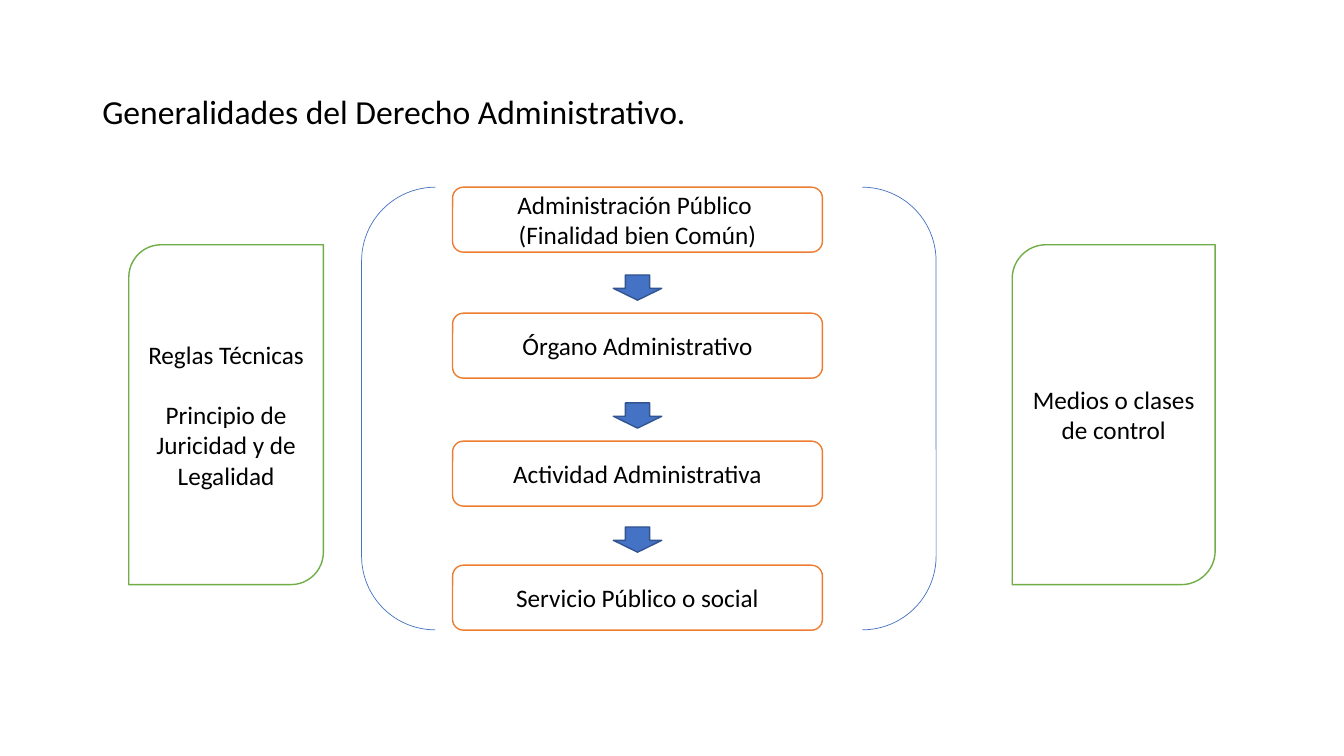
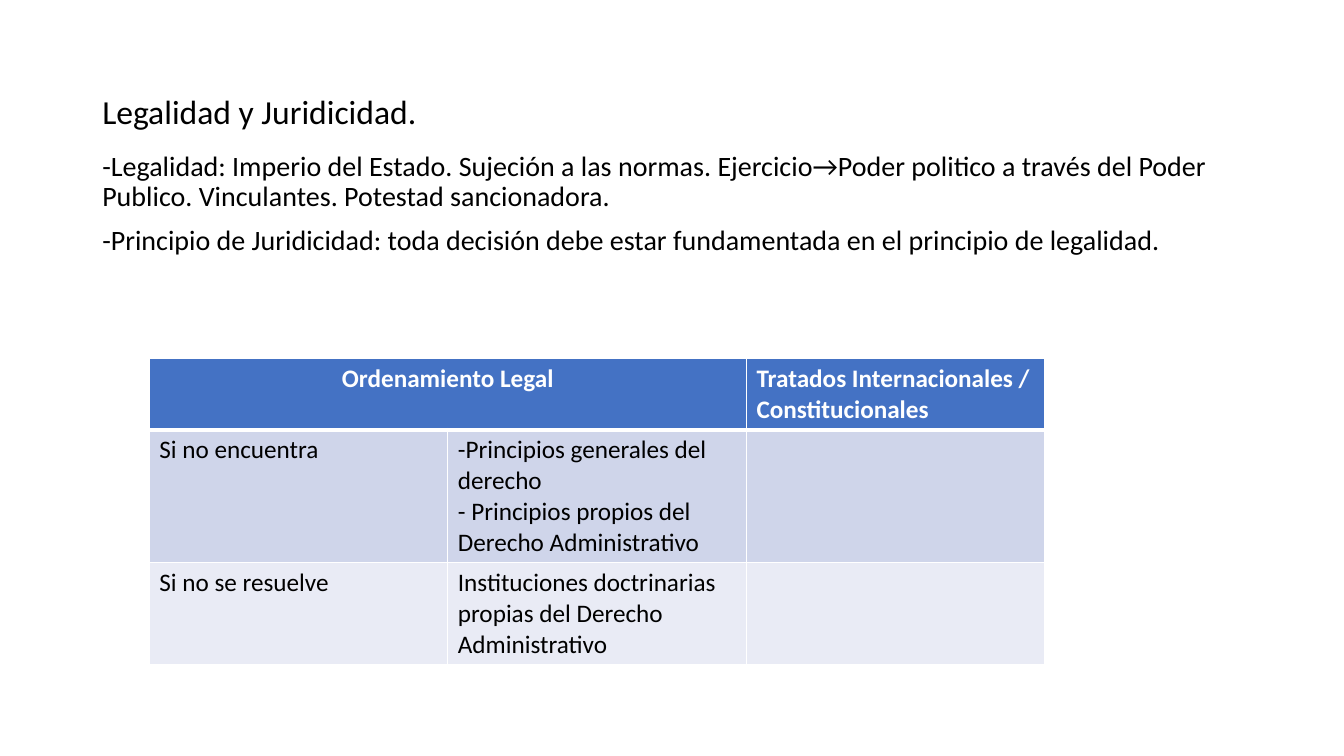
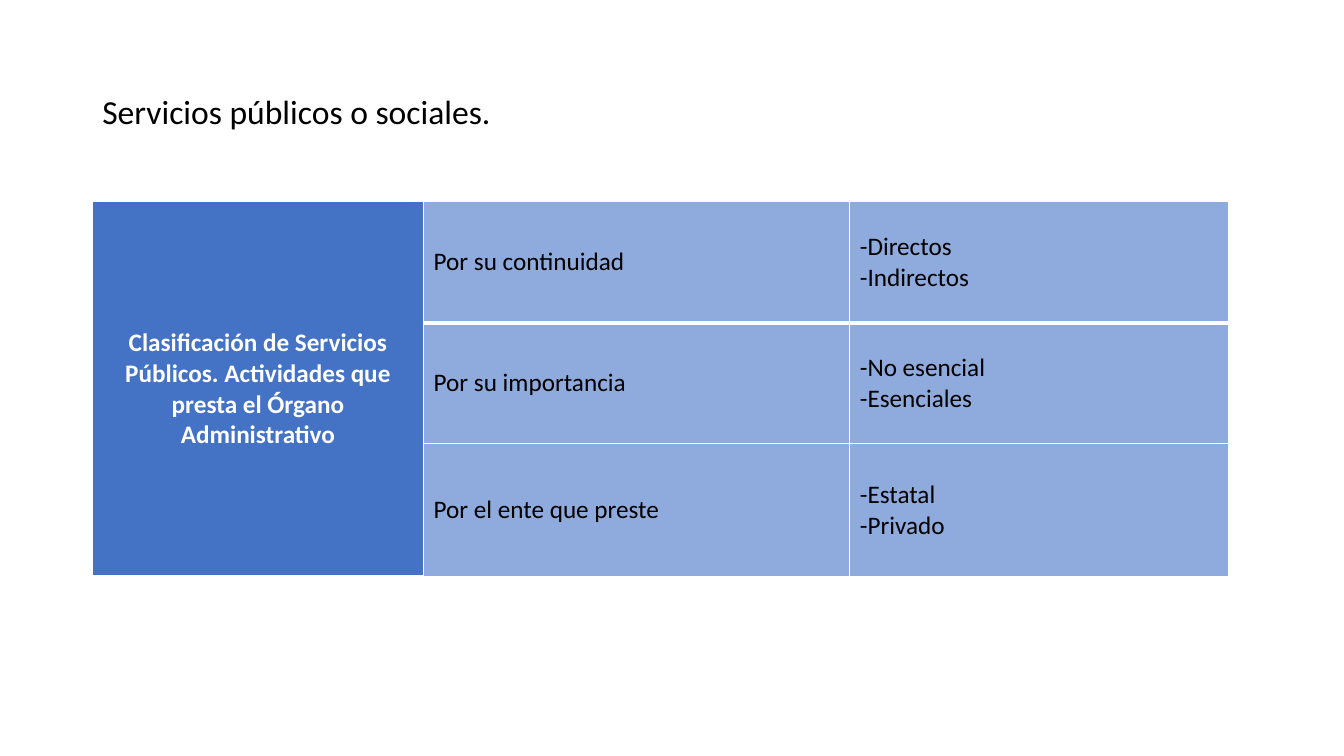
from itertools import accumulate

from lxml import etree
from pptx import Presentation
from pptx.dml.color import RGBColor
from pptx.enum import shapes, text
from pptx.oxml import ns
from pptx.util import Pt

SHAPE = shapes.MSO_SHAPE
LEFT, CENTER = text.PP_ALIGN.LEFT, text.PP_ALIGN.CENTER
TOP, MIDDLE = text.MSO_ANCHOR.TOP, text.MSO_ANCHOR.MIDDLE


class Theme:
    font = "Calibri"
    title, body, label = 24, 20, 18
    black, white = "000000", "FFFFFF"
    blue, dark_blue, mid_blue = "4472C4", "325491", "8FAADC"
    orange, green = "ED7D31", "70AD47"
    band_dark, band_light = "CFD5EA", "E9EBF5"
    thin, line, header_rule = 0.5, 1, 3


def rgb(color):
    return RGBColor.from_string(color)


def write(tf, content, size=Theme.label, color=Theme.black, bold=False,
          align=LEFT, anchor=MIDDLE, spacing=None, before=0):
    """Fill a text frame: one paragraph per line, with \\v as a line break."""
    tf.word_wrap = True
    tf.vertical_anchor = anchor
    for i, line in enumerate(content.split("\n")):
        p = tf.paragraphs[0] if i == 0 else tf.add_paragraph()
        p.text = line
        p.alignment = align
        if spacing:
            p.line_spacing = spacing
        if i:
            p.space_before = Pt(before)
        for r in p.runs:
            r.font.name, r.font.size, r.font.bold = Theme.font, Pt(size), bold
            r.font.color.rgb = rgb(color)


def add_text(slide, box, content, **fmt):
    sp = slide.shapes.add_textbox(*map(Pt, box))
    write(sp.text_frame, content, **fmt)


def add_shape(slide, kind, box, line, fill=None, width=Theme.line, label=None):
    sp = slide.shapes.add_shape(kind, *map(Pt, box))
    sp.shadow.inherit = False
    if fill:
        sp.fill.solid()
        sp.fill.fore_color.rgb = rgb(fill)
    else:
        sp.fill.background()
    sp.line.color.rgb = rgb(line)
    sp.line.width = Pt(width)
    if label:
        write(sp.text_frame, label, align=CENTER)
    return sp


def add_slide(prs, title):
    slide = prs.slides.add_slide(prs.slide_layouts[6])
    add_text(slide, (66, 28.8, 828, 104.4), title, size=Theme.title, spacing=0.9)
    return slide


def set_borders(cell, top, bottom):
    tc_pr = cell._tc.get_or_add_tcPr()
    sides = (("lnL", Theme.line), ("lnR", Theme.line), ("lnT", top), ("lnB", bottom))
    for side, width in sides:
        ln = etree.SubElement(tc_pr, ns.qn("a:" + side), w=str(Pt(width)))
        fill = etree.SubElement(ln, ns.qn("a:solidFill"))
        etree.SubElement(fill, ns.qn("a:srgbClr"), val=Theme.white)


def add_table(slide, left, top, widths, heights, rows, merge, style):
    """Draw rows of text; style(row, col) gives a fill and text format."""
    frame = slide.shapes.add_table(len(heights), len(widths), Pt(left), Pt(top),
                                   Pt(sum(widths)), Pt(sum(heights)))
    table = frame.table
    for column, width in zip(table.columns, widths):
        column.width = Pt(width)
    for i, (height, row) in enumerate(zip(heights, rows)):
        table.rows[i].height = Pt(height)
        for j, content in enumerate(row):
            cell = table.cell(i, j)
            fill, fmt = style(i, j)
            set_borders(cell, Theme.header_rule if i == 1 else Theme.line,
                        Theme.header_rule if i == 0 else Theme.line)
            cell.fill.solid()
            cell.fill.fore_color.rgb = rgb(fill)
            if content:
                write(cell.text_frame, content, **fmt)
            cell.vertical_anchor = fmt["anchor"]
    table.cell(0, 0).merge(table.cell(*merge))


def process_chain(slide, left, top, width, labels, gaps):
    """Stack boxes downwards, with an arrow above each one but the first."""
    height, arrow_w, arrow_h, arrow_lift = 46.4, 34.6, 18, 27.3
    tops = accumulate(gaps, lambda y, gap: y + height + gap, initial=top)
    for i, (y, label) in enumerate(zip(tops, labels)):
        add_shape(slide, SHAPE.ROUNDED_RECTANGLE, (left, y, width, height),
                  Theme.orange, Theme.white, label=label)
        if i:
            arrow = add_shape(slide, SHAPE.DOWN_ARROW,
                              (left + (width - arrow_w) / 2, y - arrow_lift, arrow_w, arrow_h),
                              Theme.dark_blue, Theme.blue)
            arrow.adjustments[1] = 0.47


def overview_slide(prs):
    slide = add_slide(prs, "Generalidades del Derecho Administrativo.")
    top = 133.7
    process_chain(slide, 323.3, top, 264.2,
                  ("Administración Público \n(Finalidad bien Común)", "Órgano Administrativo",
                   "Actividad Administrativa", "Servicio Público o social"),
                  (43.6, 45, 42.2))
    add_shape(slide, SHAPE.DOUBLE_BRACKET, (258.3, top, 410.4, 316.2),
              Theme.blue, width=Theme.thin)
    for left, width, label in (
            (92, 139, "Reglas Técnicas \vPrincipio de Juricidad y de Legalidad"),
            (723, 145, "Medios o clases de control")):
        add_shape(slide, SHAPE.ROUND_2_DIAG_RECTANGLE, (left, 174.8, width, 242.8),
                  Theme.green, Theme.white, label=label)


def legality_slide(prs):
    def style(i, j):
        if i == 0:
            return Theme.blue, dict(color=Theme.white, bold=True, anchor=TOP,
                                    align=LEFT if j else CENTER)
        return (Theme.band_dark if i % 2 else Theme.band_light), dict(anchor=TOP)

    slide = add_slide(prs, "Legalidad y Juridicidad.")
    add_text(slide, (66, 105.1, 828, 380.9),
             "-Legalidad: Imperio del Estado. Sujeción a las normas. Ejercicio→Poder politico "
             "a través del Poder Publico. Vinculantes. Potestad sancionadora.\n"
             "-Principio de Juridicidad: toda decisión debe estar fundamentada en el "
             "principio de legalidad.",
             size=Theme.body, anchor=TOP, spacing=0.9, before=10)
    rows = (("Ordenamiento Legal", "", "Tratados Internacionales / Constitucionales"),
            ("Si no encuentra", "-Principios generales del derecho\n"
             "- Principios propios del Derecho Administrativo", ""),
            ("Si no se resuelve",
             "Instituciones doctrinarias propias del Derecho Administrativo", ""))
    add_table(slide, 106.6, 256, [213.3] * 3, (51, 95, 73), rows, (0, 1), style)


def services_slide(prs):
    def style(i, j):
        if j == 0:
            return Theme.blue, dict(color=Theme.white, bold=True, align=CENTER, anchor=MIDDLE)
        return Theme.mid_blue, dict(anchor=MIDDLE)

    slide = add_slide(prs, "Servicios públicos o sociales.")
    rows = (("Clasificación de Servicios Públicos. Actividades que presta el Órgano "
             "Administrativo", "Por su continuidad", "-Directos\v-Indirectos"),
            ("", "Por su importancia", "-No esencial\n-Esenciales"),
            ("", "Por el ente que preste", "-Estatal\n-Privado"))
    add_table(slide, 66, 144, (236.6, 304.4, 270.5), (86.5, 86.5, 95), rows, (2, 0), style)


def main():
    prs = Presentation()
    prs.slide_width, prs.slide_height = Pt(960), Pt(540)
    overview_slide(prs)
    legality_slide(prs)
    services_slide(prs)
    prs.save("out.pptx")


if __name__ == "__main__":
    main()
